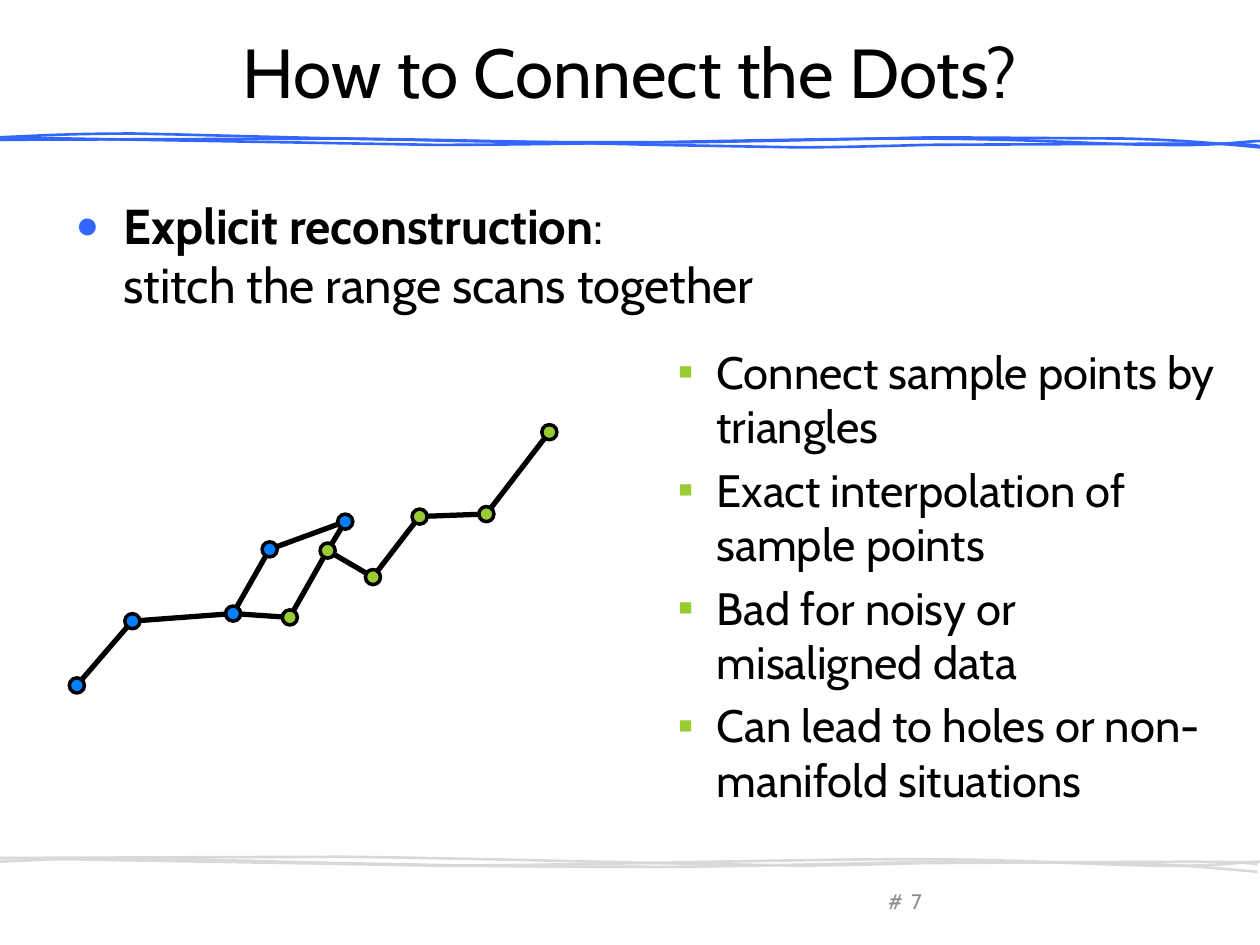
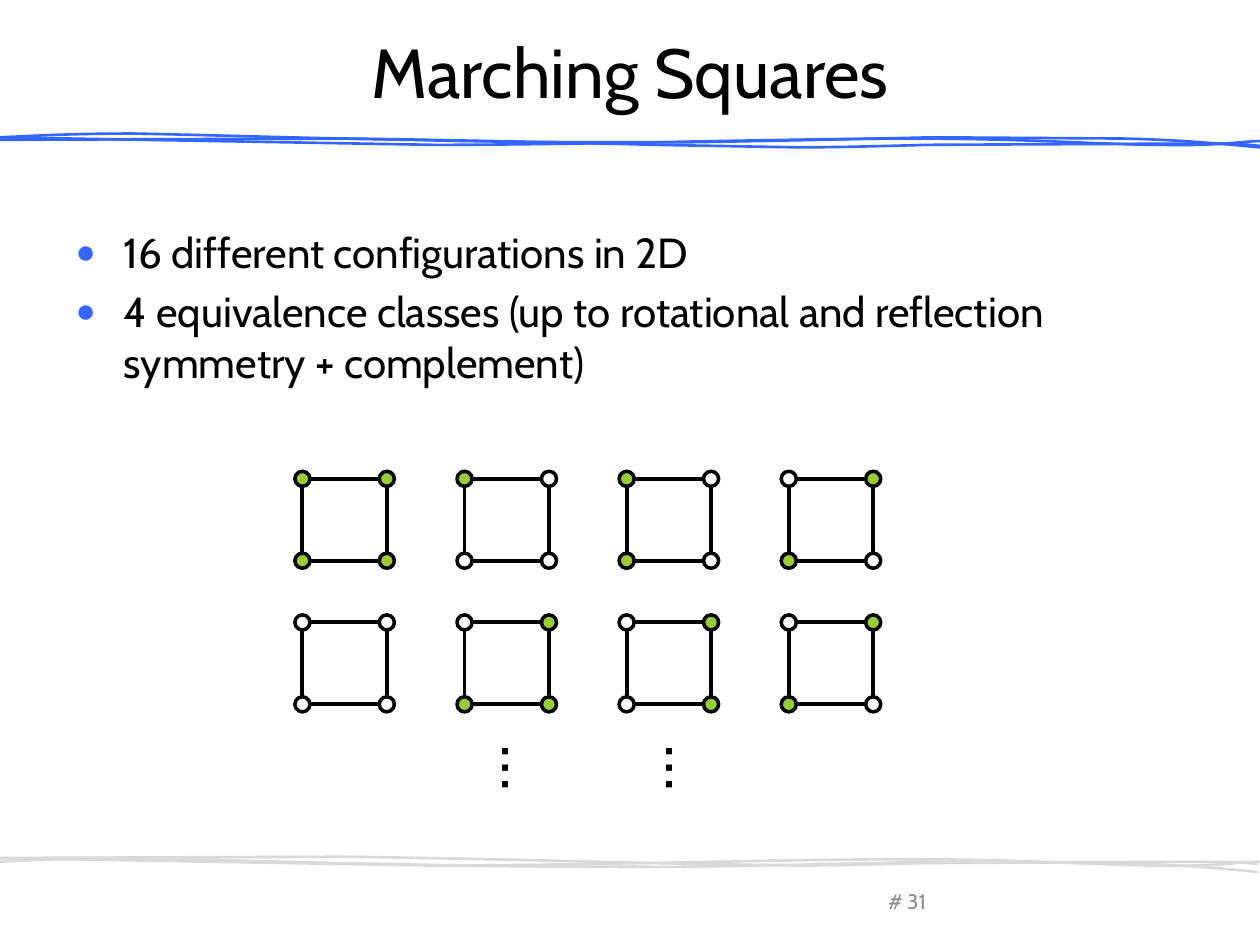
"""Builds two slides on surface reconstruction and marching squares."""
from lxml.etree import SubElement
from pptx import Presentation
from pptx.dml.color import RGBColor
from pptx.enum.shapes import MSO_CONNECTOR, MSO_SHAPE, PP_PLACEHOLDER
from pptx.enum.text import MSO_ANCHOR, MSO_AUTO_SIZE, PP_ALIGN
from pptx.oxml.ns import qn
from pptx.util import Inches, Pt

FONT, BULLET_FONT = "Cabin", "Arial"
BLACK, WHITE, GRAY, SILVER = "000000", "FFFFFF", "8C8C8C", "D9D9D9"
BLUE, SCAN_BLUE, GREEN = "3366FF", "0080FF", "99CC33"
COLUMNS, ROWS = 10, 7.5
CELL = Inches(1)
DOT = 0.12
FOOTER_TYPES = (PP_PLACEHOLDER.DATE, PP_PLACEHOLDER.FOOTER, PP_PLACEHOLDER.SLIDE_NUMBER)

# Pairs are straight steps; groups of six are cubic curves.
STRANDS = [
    [(-0.01, 1.09), (3.44, 1.15), (4.65, 1.15, 6.27, 1.1, 7.23, 1.1),
     (8.19, 1.1, 8.76, 1.15, 9.22, 1.15), (9.68, 1.16, 9.87, 1.12, 10, 1.12),
     (10.13, 1.11, 10.06, 1.12, 9.99, 1.12)],
    [(-0.01, 1.09), (0.26, 1.08, 0.52, 1.06, 1.06, 1.06),
     (1.61, 1.07, 2.52, 1.1, 3.25, 1.11), (3.97, 1.13, 4.74, 1.13, 5.43, 1.13),
     (6.12, 1.12, 7.4, 1.09, 7.4, 1.09), (8.92, 1.1),
     (9.35, 1.11, 9.68, 1.14, 10, 1.17)],
    [(-0.02, 1.11), (2.75, 1.1), (3.62, 1.11, 5.2, 1.15, 5.2, 1.15),
     (6.34, 1.17), (6.7, 1.17, 7.35, 1.15, 7.35, 1.15), (9.43, 1.14),
     (9.87, 1.14, 9.94, 1.15, 10, 1.16)],
]
HEADER_SHIFTS = [(0, 0)] * 3
FOOTER_SHIFTS = [(-0.02, 5.72), (-0.02, 5.75), (-0.02, 5.7)]

LEFT_SCAN = [(0.61, 5.44), (1.05, 4.93), (1.85, 4.87), (2.14, 4.36), (2.74, 4.14)]
RIGHT_SCAN = [(2.3, 4.9), (2.6, 4.37), (2.96, 4.58), (3.33, 4.1), (3.86, 4.08),
              (4.36, 3.43)]
# Corners run top left, top right, bottom left, bottom right; 1 is inside.
CONFIGURATIONS = [["1111", "1000", "1010", "0110"],
                  ["0000", "0111", "0101", "0110"]]
EDGES = [(0, 1), (2, 3), (0, 2), (1, 3)]


def grid(*cells):
    """Turn grid columns or rows into lengths."""
    return [round(cell * CELL) for cell in cells]


def color(value):
    """Turn a hex string into a colour."""
    return RGBColor.from_string(value)


def style(paragraph, size, ink=BLACK, align=None):
    """Set the font and alignment of a paragraph."""
    font = paragraph.font
    font.name, font.size = FONT, Pt(size)
    font.color.rgb = color(ink)
    if align is not None:
        paragraph.alignment = align


def bullet(paragraph, mark, ink, left, hang, percent=100):
    """Give a paragraph a coloured bullet and a hanging indent."""
    properties = paragraph._p.get_or_add_pPr()
    margin, indent = grid(left, -hang)
    properties.set("marL", str(margin))
    properties.set("indent", str(indent))
    tint = SubElement(properties, qn("a:buClr"))
    SubElement(tint, qn("a:srgbClr"), val=ink)
    SubElement(properties, qn("a:buSzPct"), val=str(percent * 1000))
    SubElement(properties, qn("a:buFont"), typeface=BULLET_FONT)
    SubElement(properties, qn("a:buChar"), char=mark)


def bullet_list(frame, items, size, **marks):
    """Fill a frame with bulleted paragraphs and return them."""
    paragraphs = []
    for index, item in enumerate(items):
        para = frame.add_paragraph() if index else frame.paragraphs[0]
        para.text = item
        bullet(para, **marks)
        para.space_before = Pt(size * 0.2 if index else 0)
        style(para, size)
        paragraphs.append(para)
    return paragraphs


def text_box(page, area, text, size, ink=BLACK, align=None, anchor=MSO_ANCHOR.TOP):
    """Add a one-paragraph text box."""
    box = page.shapes.add_textbox(*grid(*area))
    box.text_frame.vertical_anchor = anchor
    box.text_frame.text = text
    style(box.text_frame.paragraphs[0], size, ink, align)
    return box


def polyline(page, points, ink, width):
    """Draw an open outline through the points."""
    start, *rest = [grid(*point) for point in points]
    builder = page.shapes.build_freeform(*start)
    builder.add_line_segments(rest, close=False)
    outline = builder.convert_to_shape()
    outline.shadow.inherit = False
    outline.fill.background()
    outline.line.color.rgb = color(ink)
    outline.line.width = Pt(width)
    return outline


def wave(page, strand, shift, ink):
    """Draw a shifted strand, joining each three control points into a curve."""
    points = [(piece[i] + shift[0], piece[i + 1] + shift[1])
              for piece in strand for i in range(0, len(piece), 2)]
    outline = polyline(page, points, ink, 1.5)
    steps = iter(list(outline.element.iter(qn("a:lnTo"))))
    for piece in strand[1:]:
        first = next(steps)
        if len(piece) == 6:
            first.tag = qn("a:cubicBezTo")
            for _ in range(2):
                extra = next(steps)
                first.append(extra[0])
                extra.getparent().remove(extra)
    return outline


def segment(page, start, end, width):
    """Draw a straight black line."""
    line = page.shapes.add_connector(MSO_CONNECTOR.STRAIGHT, *grid(*start, *end))
    line.line.color.rgb = color(BLACK)
    line.line.width = Pt(width)
    SubElement(line.element.spPr, qn("a:effectLst"))


def dot(page, center, fill):
    """Draw a sample point around its center."""
    x, y = center
    circle = page.shapes.add_shape(
        MSO_SHAPE.OVAL, *grid(x - DOT / 2, y - DOT / 2, DOT, DOT))
    circle.shadow.inherit = False
    circle.fill.solid()
    circle.fill.fore_color.rgb = color(fill)
    circle.line.color.rgb = color(BLACK)
    circle.line.width = Pt(2)


def furnish_layout(layout, page):
    """Clear the layout's footers and give it the bands and number sign."""
    for owner in (layout, layout.slide_master):
        for holder in list(owner.placeholders):
            if holder.placeholder_format.type in FOOTER_TYPES:
                owner.shapes.element.remove(holder.element)
    parts = [wave(page, strand, shift, ink)
             for ink, shifts in ((BLUE, HEADER_SHIFTS), (SILVER, FOOTER_SHIFTS))
             for strand, shift in zip(STRANDS, shifts)]
    parts.append(text_box(page, (6.95, 7, 0.3, 0.3), "#", 12, GRAY,
                          PP_ALIGN.CENTER, MSO_ANCHOR.MIDDLE))
    for number, part in enumerate(parts, start=100):
        part.element.nvSpPr.cNvPr.set("id", str(number))
        layout.shapes.element.append(part.element)


def place(box, area):
    """Move a placeholder to an area and keep its text size fixed."""
    box.left, box.top, box.width, box.height = grid(*area)
    box.text_frame.auto_size = MSO_AUTO_SIZE.NONE
    box.text_frame.word_wrap = True


def start_page(page, title, number, items, size, height):
    """Fill the title, body and number of a page and return body frame and paragraphs."""
    heading, body = page.shapes.title, page.placeholders[1]
    place(heading, (0.5, 0.3, 9, 0.53))
    heading.text_frame.text = title
    heading.text_frame.vertical_anchor = MSO_ANCHOR.MIDDLE
    style(heading.text_frame.paragraphs[0], 39.6, align=PP_ALIGN.CENTER)
    place(body, (0.5, 1.5, 9, height))
    paragraphs = bullet_list(body.text_frame, items, size, mark="●", ink=BLUE,
                             left=0.38, hang=0.38, percent=80)
    text_box(page, (6.95, 6.95, 0.65, 0.4), number, 12, GRAY,
             PP_ALIGN.CENTER, MSO_ANCHOR.MIDDLE)
    return body.text_frame, paragraphs


def scan(page, points, fill):
    """Draw a range scan as a line with sample points."""
    polyline(page, points, BLACK, 3)
    for point in points:
        dot(page, point, fill)


def square(page, left, top, corners):
    """Draw one marching squares configuration."""
    points = [(left + x, top + y) for y in (0, 0.65) for x in (0, 0.67)]
    for first, last in EDGES:
        segment(page, points[first], points[last], 2.25)
    for point, inside in zip(points, corners):
        dot(page, point, GREEN if inside == "1" else WHITE)


def fill_dots_page(page):
    """Build the slide on explicit reconstruction."""
    _, (lead,) = start_page(page, "How to Connect the Dots?", "7", [""], 28, 1.45)
    term = lead.add_run()
    term.text = "Explicit reconstruction"
    term.font.bold = True
    lead.add_run().text = ": "
    lead.add_line_break()
    lead.add_run().text = "stitch the range scans together"

    segment(page, LEFT_SCAN[4], RIGHT_SCAN[1], 3)
    segment(page, RIGHT_SCAN[0], LEFT_SCAN[2], 3)
    scan(page, LEFT_SCAN, SCAN_BLUE)
    scan(page, RIGHT_SCAN, GREEN)

    box = page.shapes.add_textbox(*grid(4.78, 2.68, 5.03, 3.92))
    box.text_frame.word_wrap = True
    traits = bullet_list(box.text_frame, [
        "Connect sample points by triangles",
        "Exact interpolation of sample points",
        "Bad for noisy or misaligned data",
        "Can lead to holes or non-manifold situations",
    ], 25.9, mark="▪", ink=GREEN, left=0.81, hang=0.31)
    for trait in traits:
        trait.level = 1


def fill_squares_page(page):
    """Build the slide on marching squares."""
    frame, _ = start_page(page, "Marching Squares", "31", [
        "16 different configurations in 2D",
        "4 equivalence classes (up to rotational and reflection symmetry + complement)",
    ], 24, 5)
    frame.margin_top, = grid(0.3)
    for row, configurations in enumerate(CONFIGURATIONS):
        for column, corners in enumerate(configurations):
            square(page, 2.4 + 3.86 / 3 * column, 3.8 + 1.14 * row, corners)
    for column in range(2):
        more = text_box(page, (3.91 + 1.3 * column, 5.72, 0.59, 0.77), "…", 40)
        more.rotation = 90


def main():
    """Build and save the deck."""
    deck = Presentation()
    deck.slide_width, deck.slide_height = grid(COLUMNS, ROWS)
    layout = deck.slide_layouts[1]
    pages = [deck.slides.add_slide(layout) for _ in range(2)]
    furnish_layout(layout, pages[0])
    fill_dots_page(pages[0])
    fill_squares_page(pages[1])
    deck.save("out.pptx")


if __name__ == "__main__":
    main()
